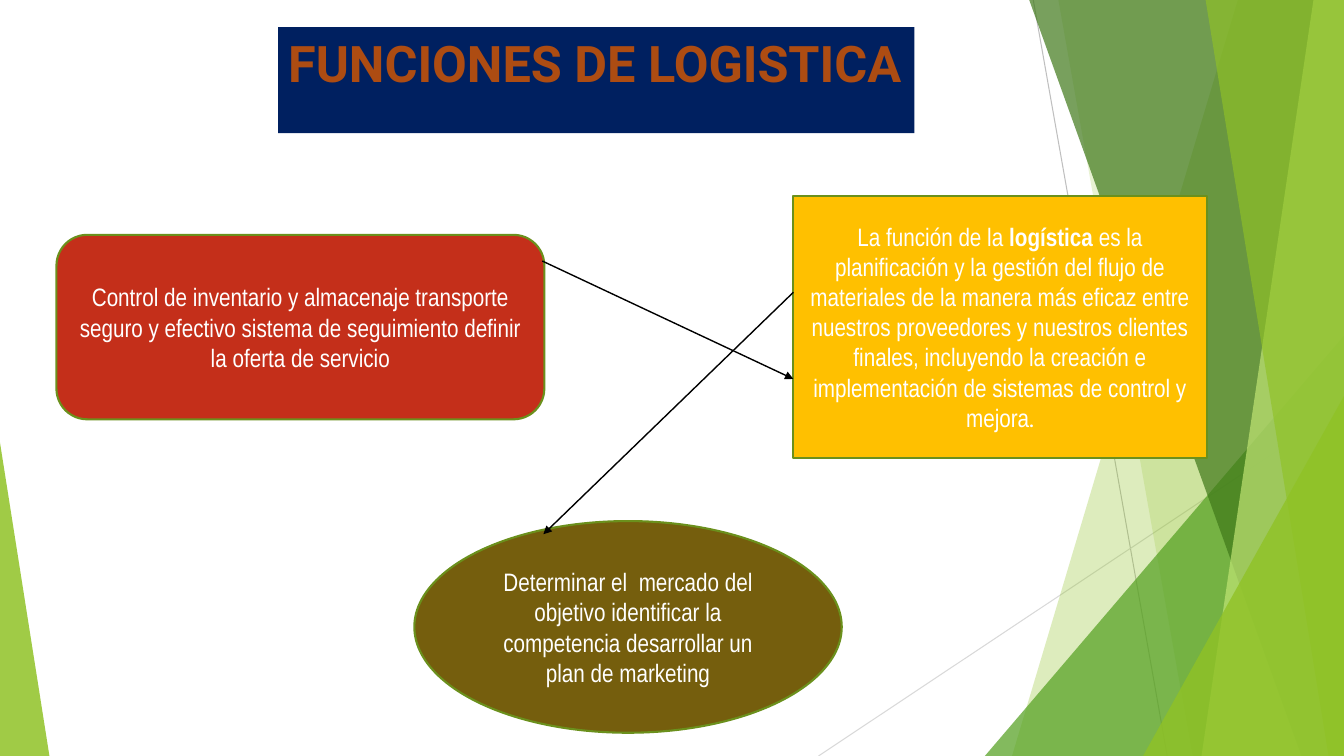
"""Build the slide on the functions of logistics."""
from lxml.etree import SubElement as Sub
from pptx import Presentation
from pptx.dml.color import RGBColor as RGB
from pptx.enum.shapes import MSO_CONNECTOR as Link, MSO_SHAPE as Form
from pptx.enum.text import MSO_ANCHOR as Anchor, PP_ALIGN as Align
from pptx.oxml import parse_xml
from pptx.oxml.ns import qn
from pptx.util import Inches, Pt

HUES = {
    "lime": "90C226", "leaf": "54A021", "forest": "3F7819", "pale": "C0E474",
    "edge": "6B901C", "navy": "002060", "rust": "AD4C12", "red": "C42F1A",
    "brown": "755E0D", "gold": "FFC000", "white": "FFFFFF", "black": "000000",
    "grey": "BFBFBF", "mist": "D9D9D9",
}
NS = "http://schemas.openxmlformats.org/drawingml/2006/main"

deck = Presentation()
deck.slide_width, deck.slide_height = Inches(13.33), Inches(7.5)
col, row = deck.slide_width / 100, deck.slide_height / 100
slide = deck.slides.add_slide(deck.slide_layouts[6])
shapes = slide.shapes


def paint(shape, hue, alpha=100):
    shape.shadow.inherit = False
    shape.fill.solid()
    shape.fill.fore_color.rgb = RGB.from_string(HUES[hue])
    shape.line.fill.background()
    if alpha < 100:
        tint = shape.fill._xPr.find(qn("a:solidFill"))[0]
        Sub(tint, qn("a:alpha"), val=str(alpha * 1000))


def draw(x1, y1, x2, y2, hue, width):
    line = shapes.add_connector(
        Link.STRAIGHT, int(x1 * col), int(y1 * row), int(x2 * col), int(y2 * row))
    line.line.color.rgb = RGB.from_string(HUES[hue])
    line.line.width = Pt(width)
    Sub(line._element.spPr, qn("a:effectLst"))
    return line


draw(76.88, 0, 86.85, 100, "grey", 0.75)
draw(100, 53.73, 60.9, 100, "mist", 0.75)

bands = [
    (92.1, 75.3, "lime", 30),
    (78.75, 88.73, "lime", 20),
    (76.58, 96.83, "forest", 70),
    (97.73, 89.4, "pale", 70),
    (89.7, 98.85, "lime", 65),
]
wedges = {
    2: [(73.28, 44.4, 26.72, 1, "leaf", 72)],
    5: [(85.05, 52.4, 14.95, 1, "lime", 80), (0, 58.53, 3.68, 0, "lime", 85)],
}
for rank, (top, foot, hue, alpha) in enumerate(bands, 1):
    pen = shapes.build_freeform(int(top * col), 0)
    ends = [(100, 0), (100, 100), (foot, 100)]
    pen.add_line_segments([(int(x * col), int(y * row)) for x, y in ends])
    paint(pen.convert_to_shape(), hue, alpha)
    for x, y, w, tip, tone, part in wedges.get(rank, []):
        wedge = shapes.add_shape(
            Form.ISOSCELES_TRIANGLE, int(x * col), int(y * row),
            int(w * col), int((100 - y) * row))
        wedge.adjustments[0] = tip
        paint(wedge, tone, part)

title = shapes.add_textbox(
    int(20.7 * col), int(3.6 * row), int(47.33 * col), int(14 * row))
paint(title, "navy")
frame = title.text_frame
frame.word_wrap = True
frame.margin_right = 0
frame.text = "FUNCIONES DE LOGISTICA"
run = frame.paragraphs[0].runs[0]
run.font.name, run.font.size, run.font.bold = "Roboto", Pt(36), True
run.font.color.rgb = RGB.from_string(HUES["rust"])
run._r.get_or_add_rPr().insert(0, parse_xml(
    f'<a:ln xmlns:a="{NS}" w="{Pt(0.8)}"><a:solidFill>'
    f'<a:srgbClr val="{HUES["red"]}"/></a:solidFill></a:ln>'))

cards = [
    (Form.ROUNDED_RECTANGLE, 4.2, 31.07, 36.3, 24.4, "red",
     ["Control de inventario y almacenaje transporte seguro y efectivo "
      "sistema de seguimiento definir la oferta de servicio"]),
    (Form.OVAL, 30.83, 68.93, 31.8, 28, "brown",
     ["Determinar el  mercado del objetivo identificar la competencia "
      "desarrollar un plan de marketing"]),
    (Form.RECTANGLE, 59.03, 25.87, 30.75, 34.67, "gold",
     ["La función de la ", "logística",
      " es la planificación y la gestión del flujo de materiales de la "
      "manera más eficaz entre nuestros proveedores y nuestros clientes "
      "finales, incluyendo la creación e implementación de sistemas de "
      "control y mejora", "."]),
]
for form, x, y, w, h, hue, texts in cards:
    card = shapes.add_shape(
        form, int(x * col), int(y * row), int(w * col), int(h * row))
    paint(card, hue)
    card.line.color.rgb = RGB.from_string(HUES["edge"])
    card.line.width = Pt(1.5)
    frame = card.text_frame
    frame.word_wrap = True
    frame.vertical_anchor = Anchor.MIDDLE
    para = frame.paragraphs[0]
    para.alignment = Align.CENTER
    for text in texts:
        run = para.add_run()
        run.text = text
        run.font.name = "Karla" if text == "." else "Arial Narrow"
        run.font.size = Pt(18)
        run.font.bold = text == "logística"
        run.font.color.rgb = RGB.from_string(HUES["white"])

arrows = [(40.35, 34.53, 59.03, 50.13), (59.03, 38.67, 40.43, 70.67)]
for ends in arrows:
    arrow = draw(*ends, "black", 1)
    Sub(arrow.line._get_or_add_ln(), qn("a:tailEnd"), type="triangle")

deck.save("out.pptx")
